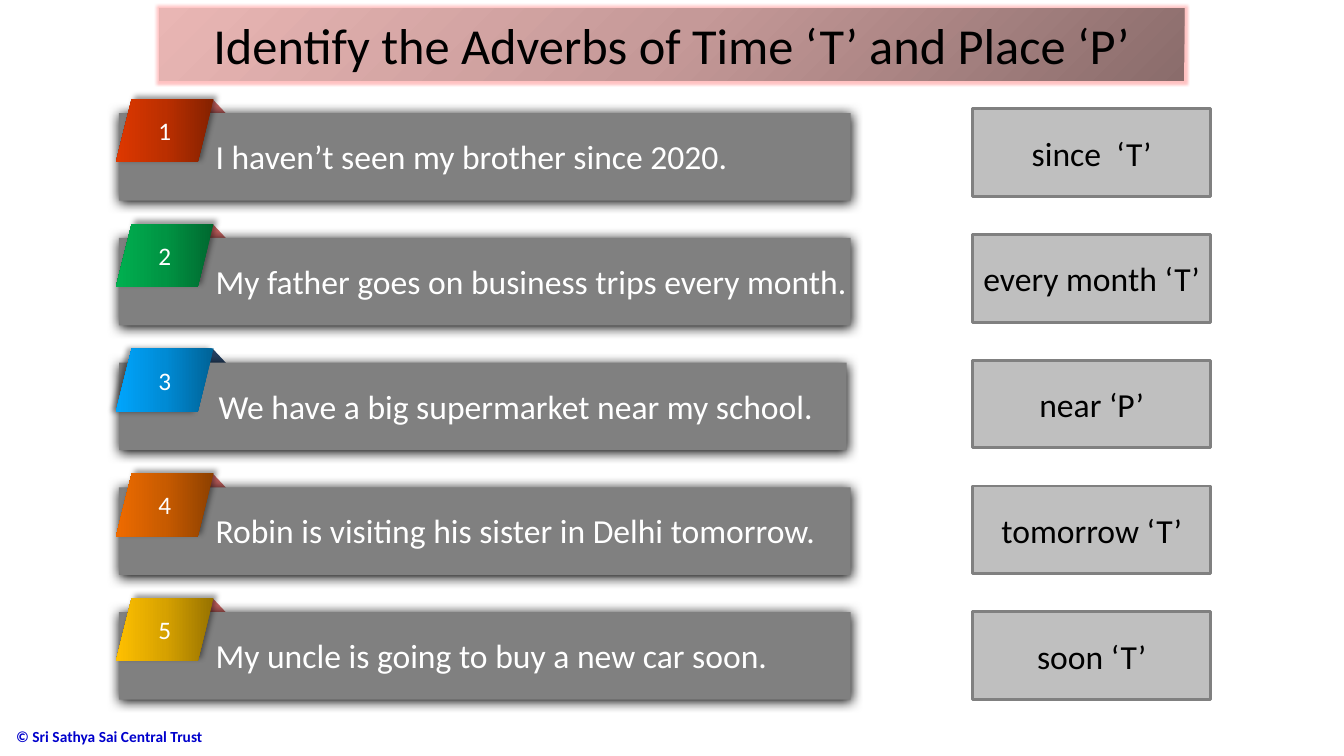
from lxml import etree
from pptx import Presentation
from pptx.dml.color import RGBColor
from pptx.enum import shapes, text
from pptx.oxml import ns
from pptx.util import Pt

COLORS = {
    "black": "000000", "white": "FFFFFF", "bar": "808080", "answer": "BFBFBF",
    "credit": "0000CC", "glow": "FF9999", "red fold": "C76361", "blue fold": "254061",
    "title": ("8A6C6B", "C59998", "E9B6B4"),
    "red": ("842100", "BB2F00", "DE3800"),
    "green": ("00682F", "009443", "00B050"),
    "blue": ("006296", "008BD5", "00A5FD"),
    "orange": ("8D4000", "C85B00", "EE6B00"),
    "yellow": ("977200", "D7A200", "FFC000"),
}


def paint(part, color, angle=180, effect=None, alpha=100, **effect_values):
    part.shadow.inherit = False
    part.line.fill.background()
    part.fill.solid()
    shades = COLORS[color]
    if isinstance(shades, str):
        part.fill.fore_color.rgb = RGBColor.from_string(shades)
    else:
        solid = part._element.spPr.find(ns.qn("a:solidFill"))
        gradient = etree.Element(ns.qn("a:gradFill"), rotWithShape="1")
        stops = etree.SubElement(gradient, ns.qn("a:gsLst"))
        for position, shade in zip((0, 50000, 100000), shades):
            stop = etree.SubElement(stops, ns.qn("a:gs"), pos=str(position))
            etree.SubElement(stop, ns.qn("a:srgbClr"), val=shade)
        etree.SubElement(gradient, ns.qn("a:lin"), ang=str(angle * 60000), scaled="1")
        solid.getparent().replace(solid, gradient)
    if effect:
        effects = part._element.spPr.find(ns.qn("a:effectLst"))
        values = {key: str(value) for key, value in effect_values.items()}
        node = etree.SubElement(effects, ns.qn("a:" + effect), values)
        tint = COLORS["glow" if effect == "glow" else "black"]
        color_node = etree.SubElement(node, ns.qn("a:srgbClr"), val=tint)
        etree.SubElement(color_node, ns.qn("a:alpha"), val=str(alpha * 1000))


def write(part, words, size, color, align=text.PP_ALIGN.CENTER, bold=False):
    frame = part.text_frame
    frame.word_wrap = True
    frame.vertical_anchor = text.MSO_ANCHOR.MIDDLE
    paragraph = frame.paragraphs[0]
    paragraph.alignment = align
    run = paragraph.add_run()
    run.text = words
    run.font.name = "Calibri"
    run.font.size = Pt(size)
    run.font.bold = bold
    run.font.color.rgb = RGBColor.from_string(COLORS[color])


deck = Presentation()
deck.slide_width, deck.slide_height = Pt(960), Pt(540)
slide = deck.slides.add_slide(deck.slide_layouts[5])

credit = slide.shapes.add_textbox(Pt(-31.7), Pt(511.2), Pt(290), Pt(29.5))
credit.text_frame.margin_left = Pt(43.2)
write(credit, "© Sri Sathya Sai Central Trust", 11, "credit", text.PP_ALIGN.LEFT, True)

title = slide.shapes.title
title.left, title.top, title.width, title.height = Pt(113.8), Pt(5.8), Pt(732.2), Pt(51.8)
paint(title, "title", 225, "glow", 60, rad=Pt(4))
write(title, "Identify the Adverbs of Time ‘T’ and Place ‘P’", 36, "black")
title.text_frame.auto_size = text.MSO_AUTO_SIZE.NONE

exercises = [
    ("I haven’t seen my brother since 2020.", "since  ‘T’", "red", "red fold", 522.7, 146.9, 315),
    ("My father goes on business trips every month.", "every month ‘T’", "green", "red fold", 522.7, 146.9, 315),
    ("We have a big supermarket near my school.", "near ‘P’", "blue", "blue fold", 519.8, 149, 180),
    ("Robin is visiting his sister in Delhi tomorrow.", "tomorrow ‘T’", "orange", "red fold", 522.7, 146.9, 315),
    ("My uncle is going to buy a new car soon.", "soon ‘T’", "yellow", "red fold", 522.7, 146.9, 315),
]
for index, (sentence, answer, tab_color, fold_color, bar_width, sentence_left, light) in enumerate(exercises):
    top = 70.6 + index * 89.1
    row = slide.shapes.add_group_shape().shapes

    fold = row.add_shape(shapes.MSO_SHAPE.ISOSCELES_TRIANGLE, Pt(136), Pt(top + 0.6), Pt(32.4), Pt(17.3))
    paint(fold, fold_color)

    bar = row.add_shape(shapes.MSO_SHAPE.RECTANGLE, Pt(85), Pt(top + 10.2), Pt(bar_width), Pt(62.6))
    paint(bar, "bar", effect="outerShdw", blurRad=Pt(8.5), dist=Pt(1), dir=90 * 60000)

    tab = row.add_shape(shapes.MSO_SHAPE.PARALLELOGRAM, Pt(82.8), Pt(top), Pt(69.8), Pt(45.4))
    paint(tab, tab_color, 180, "outerShdw", 40, blurRad=Pt(4), dist=Pt(3), dir=light * 60000)
    write(tab, str(index + 1), 18, "white")

    prompt = row.add_textbox(Pt(sentence_left), Pt(top + 23), Pt(468.7), Pt(36))
    write(prompt, sentence, 24, "white", text.PP_ALIGN.LEFT)
    prompt.text_frame.auto_size = text.MSO_AUTO_SIZE.SHAPE_TO_FIT_TEXT

    solution = slide.shapes.add_shape(
        shapes.MSO_SHAPE.RECTANGLE, Pt(694.8), Pt(77.8 + index * 89.8), Pt(170), Pt(62.6))
    paint(solution, "answer")
    solution.line.color.rgb = RGBColor.from_string(COLORS["bar"])
    solution.line.width = Pt(2)
    write(solution, answer, 24, "black")

deck.save("out.pptx")
